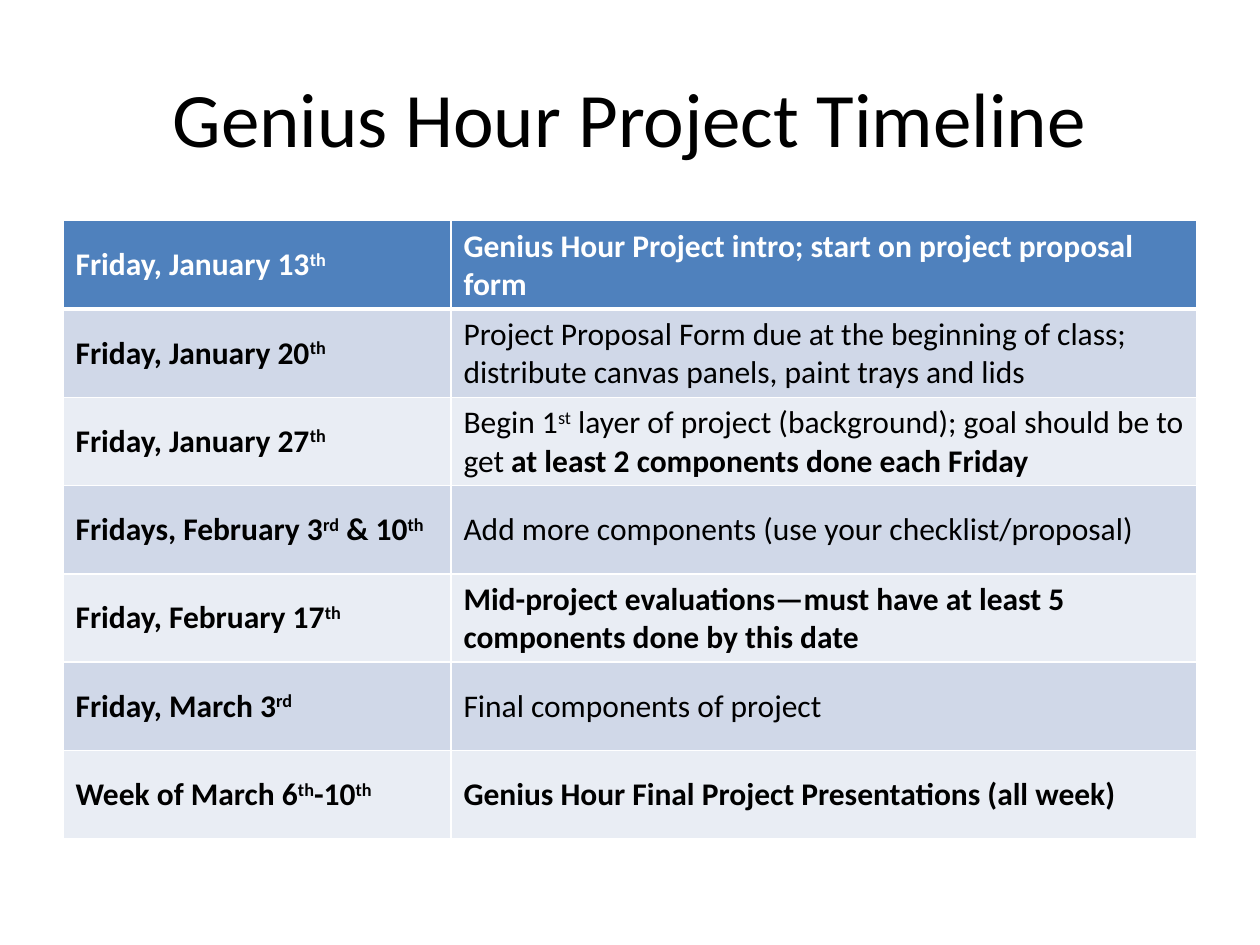
from dataclasses import dataclass

from lxml import etree
from pptx import Presentation
from pptx.dml.color import RGBColor
from pptx.enum.text import MSO_ANCHOR, PP_ALIGN
from pptx.oxml.ns import qn
from pptx.util import Cm, Pt

MIDDLE = MSO_ANCHOR.MIDDLE
CENTER = PP_ALIGN.CENTER
LEFT = PP_ALIGN.LEFT
BLANK_LAYOUT = 6

MARGIN = 1.27
CONTENT_WIDTH = 22.86
COLUMN_WIDTHS = (7.82, 15.04)
ROW_HEIGHT = 1.78

TIMELINE = [
    ("Friday, January 13^th^", "*Genius Hour Project intro; start on project proposal form*"),
    ("Friday, January 20^th^", "Project Proposal Form due at the beginning of class; "
                               "distribute canvas panels, paint trays and lids"),
    ("Friday, January 27^th^", "Begin 1^st^ layer of project (background); goal should be to get "
                               "*at least 2 components done each Friday*"),
    ("Fridays, February 3^rd^ & 10^th^", "Add more components (use your checklist/proposal)"),
    ("Friday, February 17^th^", "*Mid-project evaluations—must have at least 5 "
                                "components done by this date*"),
    ("Friday, March 3^rd^", "Final components of project"),
    ("Week of March 6^th^-10^th^", "*Genius Hour Final Project Presentations (all week)*"),
]


@dataclass(frozen=True)
class Theme:
    font: str = "Calibri"
    title_size: int = 44
    cell_size: int = 18
    text: str = "000000"
    header_text: str = "FFFFFF"
    header_fill: str = "4F81BD"
    band_fills: tuple = ("E9EDF4", "D0D8E8")
    border: str = "FFFFFF"
    border_width: int = 1
    header_border_width: int = 3


class SlideBuilder:
    """Draw styled elements on one slide; in text, ^ toggles superscript and * toggles bold."""

    def __init__(self, slide, theme):
        self.slide = slide
        self.theme = theme

    def fill_paragraph(self, paragraph, text, size, color, alignment=LEFT):
        paragraph.alignment = alignment
        paragraph.font.name = self.theme.font
        paragraph.font.size = Pt(size)
        paragraph.font.color.rgb = RGBColor.from_string(color)
        for bold_index, section in enumerate(text.split("*")):
            for raised_index, part in enumerate(section.split("^")):
                if not part:
                    continue
                run = paragraph.add_run()
                run.text = part
                run.font.bold = bold_index % 2 == 1
                if raised_index % 2:
                    run.font._element.set("baseline", "30000")

    def title(self, text, left, top, width, height):
        shape = self.slide.shapes.add_textbox(Cm(left), Cm(top), Cm(width), Cm(height))
        frame = shape.text_frame
        frame.word_wrap = True
        frame.vertical_anchor = MIDDLE
        self.fill_paragraph(frame.paragraphs[0], text, self.theme.title_size, self.theme.text, CENTER)

    def borders(self, cell, top_width, bottom_width):
        properties = cell._tc.get_or_add_tcPr()
        thin = self.theme.border_width
        sides = (("a:lnL", thin), ("a:lnR", thin), ("a:lnT", top_width), ("a:lnB", bottom_width))
        for position, (tag, width) in enumerate(sides):
            line = etree.Element(qn(tag), w=str(Pt(width)))
            fill = etree.SubElement(line, qn("a:solidFill"))
            etree.SubElement(fill, qn("a:srgbClr"), val=self.theme.border)
            properties.insert(position, line)

    def table(self, rows, left, top, column_widths, row_height):
        theme = self.theme
        table = self.slide.shapes.add_table(
            len(rows), len(column_widths), Cm(left), Cm(top),
            Cm(sum(column_widths)), Cm(row_height * len(rows))).table
        for column, width in zip(table.columns, column_widths):
            column.width = Cm(width)
        thin, thick = theme.border_width, theme.header_border_width
        for row_index, (date, task) in enumerate(rows):
            table.rows[row_index].height = Cm(row_height)
            is_header = row_index == 0
            fill = theme.header_fill if is_header else theme.band_fills[row_index % 2]
            color = theme.header_text if is_header else theme.text
            for cell, text in zip(table.rows[row_index].cells, (f"*{date}*", task)):
                cell.vertical_anchor = MIDDLE
                cell.fill.solid()
                cell.fill.fore_color.rgb = RGBColor.from_string(fill)
                self.borders(cell, thick if row_index == 1 else thin, thick if is_header else thin)
                self.fill_paragraph(cell.text_frame.paragraphs[0], text, theme.cell_size, color)


def main():
    presentation = Presentation()
    presentation.slide_width = Cm(25.4)
    presentation.slide_height = Cm(19.05)
    slide = presentation.slides.add_slide(presentation.slide_layouts[BLANK_LAYOUT])
    builder = SlideBuilder(slide, Theme())
    builder.title("Genius Hour Project Timeline", MARGIN, 0.76, CONTENT_WIDTH, 3.18)
    builder.table(TIMELINE, MARGIN, 4.45, COLUMN_WIDTHS, ROW_HEIGHT)
    presentation.save("out.pptx")


if __name__ == "__main__":
    main()
